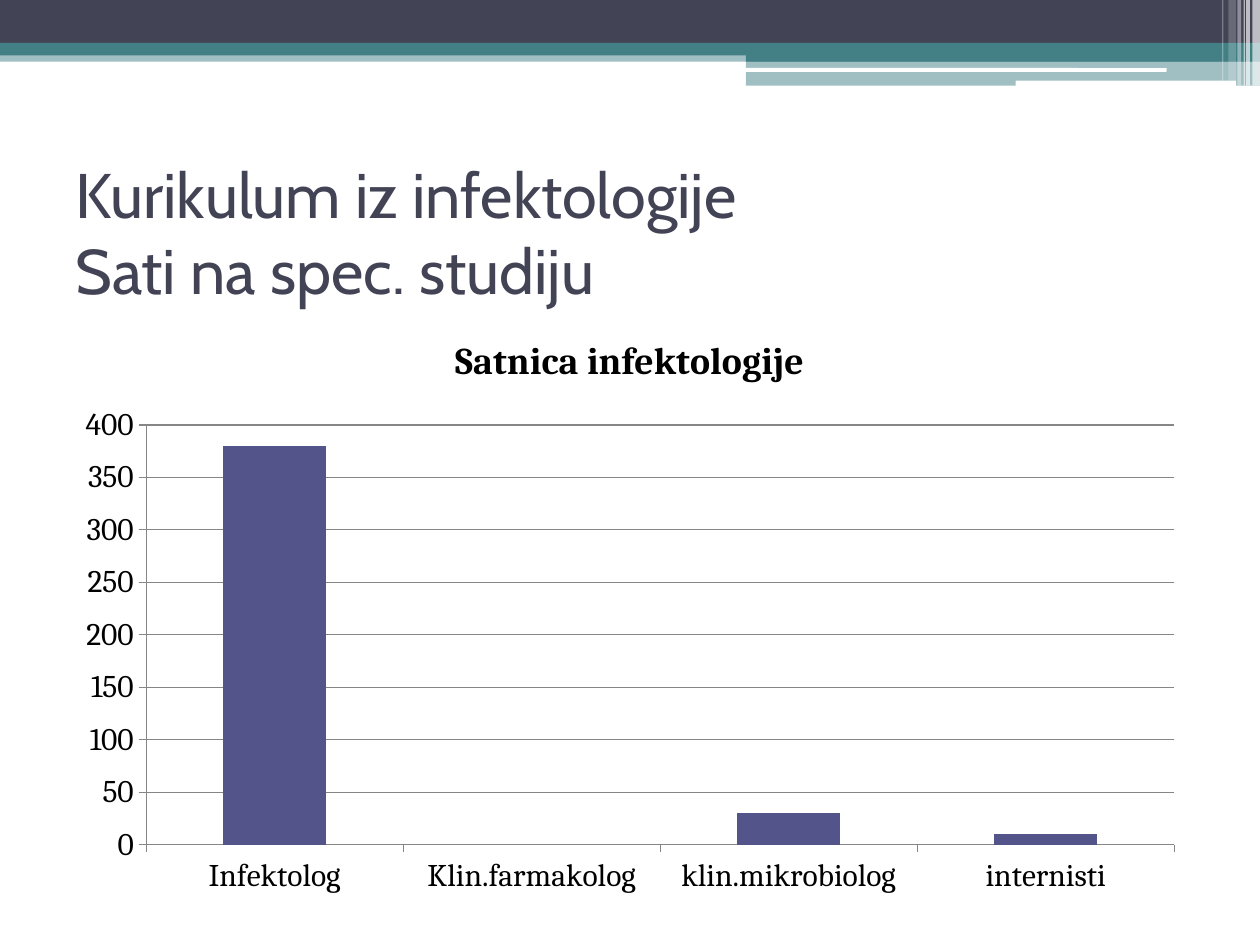
from pptx import Presentation
from pptx.chart.data import CategoryChartData
from pptx.dml.color import RGBColor
from pptx.enum.chart import XL_CHART_TYPE as CT, XL_TICK_MARK as TM
from pptx.enum.shapes import MSO_SHAPE as MS
from pptx.enum.text import MSO_ANCHOR as MA
from pptx.oxml.xmlchemy import OxmlElement
from pptx.util import Inches, Pt


def rgb(code):
    return RGBColor.from_string(code)


def style(font, size=18, name="Cambria", color="000000", bold=False):
    font.size, font.name, font.bold = Pt(size), name, bold
    font.color.rgb = rgb(color)


def write(tf, text, **fmt):
    p = tf.paragraphs[0]
    for i, line in enumerate(text.split("\n")):
        if i:
            p.add_line_break()
        r = p.add_run()
        r.text = line
        style(r.font, **fmt)


class Deck:
    DARK, TEAL, WHITE = "424456", "438086", "FFFFFF"
    BAR, GRID = "53548A", "868686"
    COLS, ROWS = 100, 75

    def __init__(self):
        self.prs = Presentation()
        self.prs.slide_width, self.prs.slide_height = Inches(10), Inches(7.5)
        self.s = self.prs.slides.add_slide(self.prs.slide_layouts[6])

    def box(self, col, row, cols, rows):
        w = self.prs.slide_width / self.COLS
        h = self.prs.slide_height / self.ROWS
        return [round(v) for v in (col * w, row * h, cols * w, rows * h)]

    def band(self, *at, color, alpha=100, kind=MS.RECTANGLE):
        sp = self.s.shapes.add_shape(kind, *self.box(*at))
        sp.shadow.inherit = False
        sp.line.fill.background()
        sp.fill.solid()
        sp.fill.fore_color.rgb = rgb(color)
        if alpha < 100:
            a = OxmlElement("a:alpha")
            a.set("val", str(alpha * 1000))
            sp.fill._xPr.find(".//{*}srgbClr").append(a)

    def title(self, *at, text):
        tf = self.s.shapes.add_textbox(*self.box(*at)).text_frame
        tf.word_wrap = True
        tf.vertical_anchor = MA.MIDDLE
        write(tf, text, size=36, name="Cabin", color=self.DARK)

    def columns(self, *at, title, values):
        data = CategoryChartData()
        data.categories = list(values)
        data.add_series("Series 1", list(values.values()))
        chart = self.s.shapes.add_chart(CT.COLUMN_CLUSTERED, *self.box(*at), data).chart
        style(chart.font)
        chart.has_legend = False
        chart.has_title = True
        write(chart.chart_title.text_frame, title, size=21.6, bold=True)
        plot = chart.plots[0]
        plot.gap_width, plot.vary_by_categories = 150, False
        fill = plot.series[0].format.fill
        fill.solid()
        fill.fore_color.rgb = rgb(self.BAR)
        axis = chart.value_axis
        axis.minimum_scale, axis.maximum_scale, axis.major_unit = 0, 400, 50
        axis.has_major_gridlines = True
        for part in (axis, chart.category_axis, axis.major_gridlines):
            part.format.line.color.rgb = rgb(self.GRID)
            part.format.line.width = Pt(0.75)
        for ax in (axis, chart.category_axis):
            ax.major_tick_mark, ax.minor_tick_mark = TM.OUTSIDE, TM.NONE


def main():
    d = Deck()
    d.band(0, 4, 100, 0.9, color=d.TEAL, alpha=50)
    d.band(0, 0, 100, 3.4, color=d.DARK)
    d.band(0, 3.4, 100, 1, color=d.TEAL)
    d.band(59.2, 3.9, 40.8, 1, color=d.TEAL)
    d.band(59.2, 4.8, 40.8, 2, color=d.TEAL, alpha=50)
    for at in ((59.1, 5.4, 33.5, 0.3), (80.6, 6.4, 17.5, 0.45)):
        d.band(*at, color=d.WHITE, kind=MS.ROUNDED_RECTANGLE)
    for col, cols, rows, alpha in (
        (99.4, 0.6, 6.8, 65), (98.9, 0.3, 6.8, 65), (98.7, 0.1, 6.8, 60),
        (98.2, 0.3, 6.8, 40), (97.5, 0.6, 6.4, 20), (97, 0.1, 6.4, 30),
    ):
        d.band(col, 0, cols, rows, color=d.WHITE, alpha=alpha)
    d.title(5, 12.5, 90, 11.7, text="Kurikulum iz infektologije\nSati na spec. studiju")
    d.columns(5, 24.6, 90, 47.3, title="Satnica infektologije", values={
        "Infektolog": 380, "Klin.farmakolog": None, "klin.mikrobiolog": 30, "internisti": 10,
    })
    d.prs.save("out.pptx")


if __name__ == "__main__":
    main()
